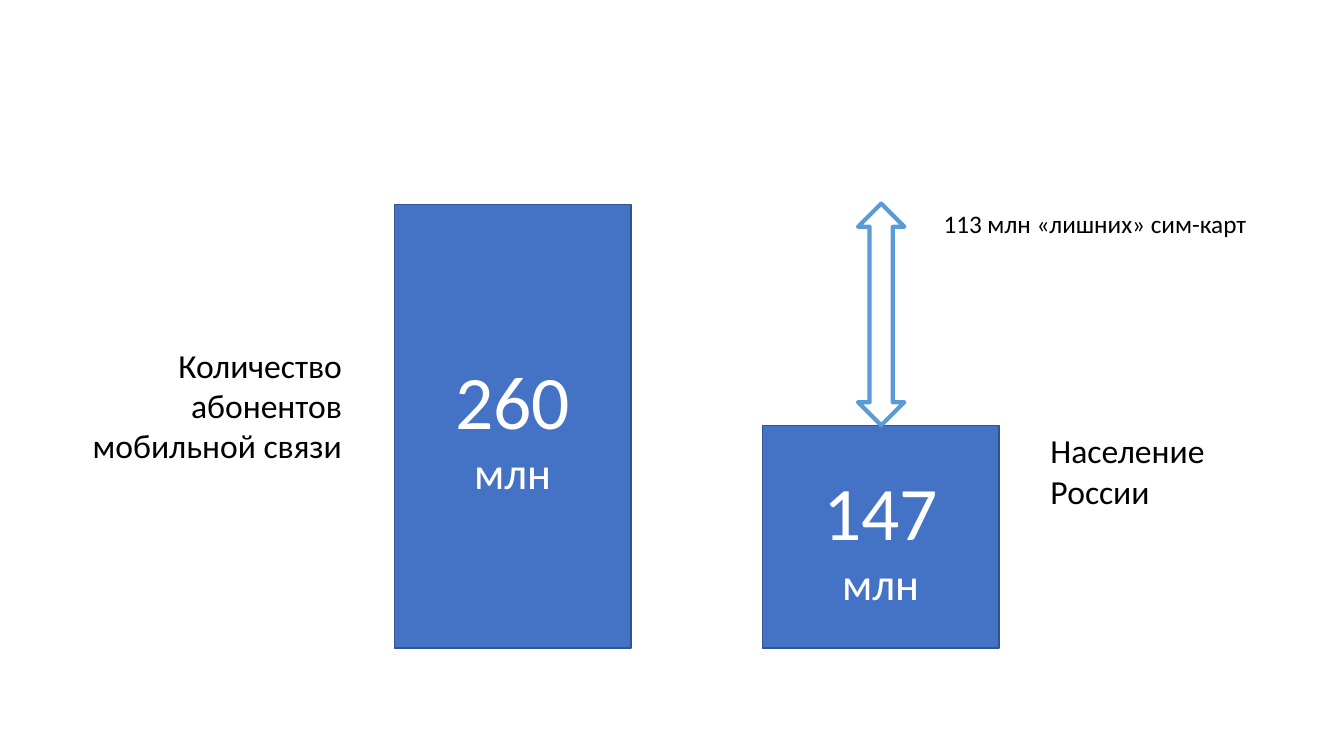
from pptx import Presentation
from pptx import util as u
from pptx.dml.color import RGBColor
from pptx.enum import shapes, text

PX = 9144  # EMU per px, 100 px to the inch
BLUE = RGBColor(0x44, 0x72, 0xC4)
NAVY = RGBColor(0x32, 0x54, 0x91)
SKY = RGBColor(0x5B, 0x9B, 0xD5)
WHITE = RGBColor(0xFF, 0xFF, 0xFF)
BLACK = RGBColor(0, 0, 0)

prs = Presentation()
prs.slide_width, prs.slide_height = 1333 * PX, 750 * PX
s = prs.slides.add_slide(prs.slide_layouts[6])


def add_figure(kind, box, fill, line, width):
    sp = s.shapes.add_shape(kind, *[v * PX for v in box])
    sp.shadow.inherit = False
    sp.fill.solid()
    sp.fill.fore_color.rgb = fill
    sp.line.color.rgb = line
    sp.line.width = u.Pt(width)
    return sp


def write(p, words, size, color, align):
    p.alignment = align
    r = p.add_run()
    r.text = words
    for name, value in {"name": "Calibri", "size": u.Pt(size)}.items():
        setattr(r.font, name, value)
    r.font.color.rgb = color


# Bars standing on a common base line
BASE, BAR_WIDTH = 643, 235
for left, height, value in [(391, 440, "260"), (756, 221, "147")]:
    sp = add_figure(shapes.MSO_SHAPE.RECTANGLE,
                    (left, BASE - height, BAR_WIDTH, height), BLUE, NAVY, 1)
    tf = sp.text_frame
    tf.vertical_anchor = text.MSO_ANCHOR.MIDDLE
    write(tf.paragraphs[0], value, 54, WHITE, text.PP_ALIGN.CENTER)
    write(tf.add_paragraph(), "млн", 32, WHITE, text.PP_ALIGN.CENTER)

# Left label
LEFT, RIGHT = text.PP_ALIGN.LEFT, text.PP_ALIGN.RIGHT
labels = [
    ((68, 337, 281, 172), "Количество абонентов мобильной связи", 24, RIGHT, True),
    ((1032, 422, 198, 91), "Население России", 24, LEFT, True),
    ((926, 202, 324, 40), "113 млн «лишних» сим-карт", 18, LEFT, False),
]
for box, words, size, align, wrap in labels:
    tf = s.shapes.add_textbox(*[v * PX for v in box]).text_frame
    tf.word_wrap = wrap
    write(tf.paragraphs[0], words, size, BLACK, align)

# Arrow spanning the difference
arrow = add_figure(shapes.MSO_SHAPE.UP_DOWN_ARROW, (851, 202, 46, 220), WHITE, SKY, 3)
arrow.adjustments[0] = 0.08
arrow.adjustments[1] = 0.5

prs.save("out.pptx")
